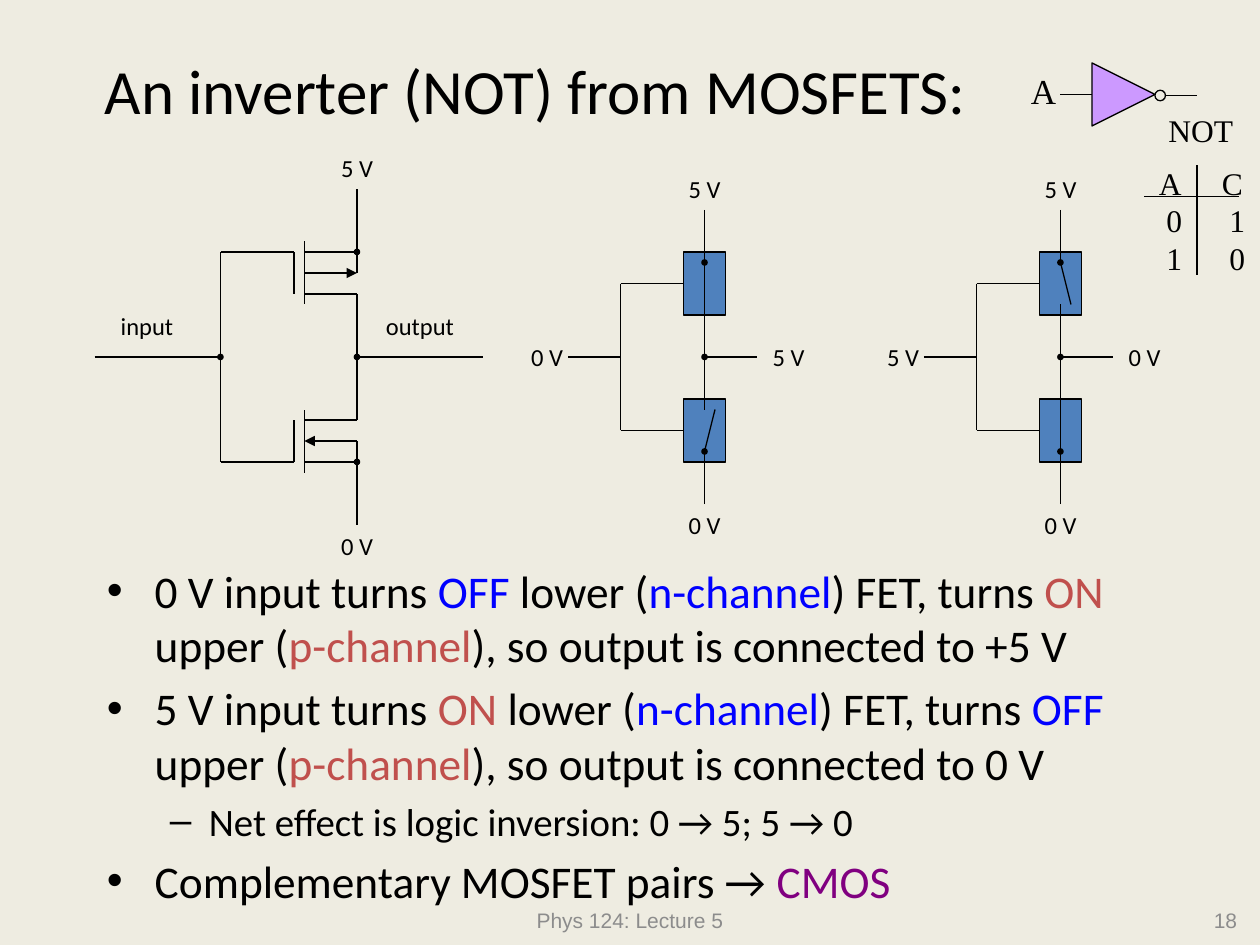
import pptx
import pptx.util
import pptx.dml.color
import pptx.enum.shapes
import pptx.enum.text
import pptx.oxml.ns
from lxml import etree

COLORS = {"paper": "EEECE1", "ink": "000000", "grey": "8C8C8C", "blue": "0000FF",
          "red": "C0504D", "purple": "800080", "switch": "4F81BD", "gate": "CC99FF"}
WORD_COLORS = {"OFF": "blue", "n-channel": "blue", "ON": "red",
               "p-channel": "red", "CMOS": "purple"}
COLS, ROWS = 120, 90          # grid of twelfths of an inch
AXIS = 34                     # row of the output line, the circuits mirror about it
SHAPE = pptx.enum.shapes.MSO_SHAPE
ALIGN = {"l": pptx.enum.text.PP_ALIGN.LEFT, "c": pptx.enum.text.PP_ALIGN.CENTER,
         "r": pptx.enum.text.PP_ALIGN.RIGHT}


def rgb(name):
    return pptx.dml.color.RGBColor.from_string(COLORS[name])


def add_xml(parent, tag, **attrs):
    return etree.SubElement(parent, pptx.oxml.ns.qn(tag), attrs)


def mirror(row, flipped):
    return 2 * AXIS - row if flipped else row


class Deck:
    def __init__(self):
        self.prs = pptx.Presentation()
        self.prs.slide_width = pptx.util.Inches(10)
        self.prs.slide_height = pptx.util.Inches(7.5)
        self.s = self.prs.slides.add_slide(self.prs.slide_layouts[6])
        self.s.background.fill.solid()
        self.s.background.fill.fore_color.rgb = rgb("paper")

    def x(self, col):
        return round(self.prs.slide_width * col / COLS)

    def y(self, row):
        return round(self.prs.slide_height * row / ROWS)

    def line(self, x1, y1, x2, y2, arrow=False):
        c = self.s.shapes.add_connector(pptx.enum.shapes.MSO_CONNECTOR.STRAIGHT,
                                        self.x(x1), self.y(y1), self.x(x2), self.y(y2))
        c.line.color.rgb = rgb("ink")
        c.line.width = pptx.util.Pt(0.75)
        if arrow:
            add_xml(c.line._get_or_add_ln(), "a:tailEnd", type="triangle")
        add_xml(c._element.spPr, "a:effectLst")

    def shape(self, kind, x, y, w, h, fill=None, rotation=0):
        sp = self.s.shapes.add_shape(kind, self.x(x), self.y(y), self.x(w), self.y(h))
        sp.shadow.inherit = False
        sp.rotation = rotation
        if fill:
            sp.fill.solid()
            sp.fill.fore_color.rgb = rgb(fill)
        else:
            sp.fill.background()
        sp.line.color.rgb = rgb("ink")
        sp.line.width = pptx.util.Pt(0.75)

    def dot(self, x, y):
        self.shape(SHAPE.OVAL, x - 0.25, y - 0.25, 0.5, 0.5, "ink")

    def style(self, r, size, font="Calibri", color="ink"):
        r.font.size = pptx.util.Pt(size)
        r.font.name = font
        r.font.color.rgb = rgb(color)

    def text(self, text, x, y, w, h, size, font="Calibri", color="ink", align="c",
             middle=False, wrap=False):
        tf = self.s.shapes.add_textbox(self.x(x), self.y(y), self.x(w), self.y(h)).text_frame
        tf.word_wrap = wrap
        if middle:
            tf.vertical_anchor = pptx.enum.text.MSO_ANCHOR.MIDDLE
        tf.text = text
        for p in tf.paragraphs:
            p.alignment = ALIGN[align]
            for r in p.runs:
                self.style(r, size, font, color)
        return tf

    def label(self, text, center, top):
        self.text(text, center - 5, top, 10, 4, 14)

    def bullets(self, items, x, y, w, h):
        tf = self.text("", x, y, w, h, 26, wrap=True)
        for i, (level, text) in enumerate(items):
            p = tf.paragraphs[0] if i == 0 else tf.add_paragraph()
            size, left, hang, mark = ((25.9, 0.38, 0.38, "•"), (22.2, 0.81, 0.31, "–"))[level]
            p.level = level
            p.alignment = ALIGN["l"]
            p.space_before = pptx.util.Pt(size / 5)
            for part in text.split("*"):
                r = p.add_run()
                r.text = part
                self.style(r, size, color=WORD_COLORS.get(part, "ink"))
            pPr = p._p.get_or_add_pPr()
            pPr.set("marL", str(pptx.util.Inches(left)))
            pPr.set("indent", str(-pptx.util.Inches(hang)))
            add_xml(pPr, "a:buFont", typeface="Arial")
            add_xml(pPr, "a:buChar", char=mark)

    def transistor(self, lower):
        bus, gate, channel, stem = 21, 28, 29, 34
        far, mid, near, supply, top, bottom = (
            mirror(row, lower) for row in (24, 26, 28, 18, 23, 29))
        self.line(bus, far, gate, far)
        self.line(gate, far, gate, near)
        self.line(channel, top, channel, bottom)
        self.line(channel, far, stem, far)
        self.line(channel, near, stem, near)
        self.line(stem, supply, stem, mid)
        self.line(stem, near, stem, AXIS)
        ends = (stem, channel) if lower else (channel, stem)
        self.line(ends[0], mid, ends[1], mid, arrow=True)
        self.dot(stem, far)

    def switch(self, stem, lower, closed):
        supply, pivot, contact, control = (mirror(row, lower) for row in (20, 25, 29, 27))
        self.shape(SHAPE.RECTANGLE, stem - 2, 38 if lower else 24, 4, 6, "switch")
        self.line(stem, supply, stem, pivot)
        self.line(stem, contact, stem, AXIS)
        self.line(stem - 8, control, stem - 2, control)
        self.line(stem, pivot, stem if closed else stem + 1, contact)
        self.dot(stem, pivot)

    def switch_pair(self, stem, source, result):
        for lower in (False, True):
            self.switch(stem, lower, closed=lower == (source == "5 V"))
        self.line(stem - 8, 27, stem - 8, 41)
        self.line(stem - 13, AXIS, stem - 8, AXIS)
        self.line(stem, AXIS, stem + 5, AXIS)
        self.dot(stem, AXIS)
        for text, center, top in (("5 V", stem, 16), (source, stem - 15, 32),
                                  (result, stem + 8, 32), ("0 V", stem, 48)):
            self.label(text, center, top)

    def truth_table(self, rows, x, y, w, h):
        tf = self.text("\n".join("\t".join(row) for row in rows), x, y, w, h, 18,
                       "Times New Roman", align="l")
        for i, p in enumerate(tf.paragraphs):
            left, stop = (0.06, 0.4) if i else (0, 0.35)
            pPr = p._p.get_or_add_pPr()
            pPr.set("marL", str(pptx.util.Inches(left)))
            pPr.set("indent", "0")
            tabs = add_xml(pPr, "a:tabLst")
            add_xml(tabs, "a:tab", pos=str(pptx.util.Inches(stop)), algn="l")


def main():
    d = Deck()

    # Title and footer
    d.text("An inverter (NOT) from MOSFETS:", 0, 1, 102, 15, 36, middle=True)
    d.text("Phys 124: Lecture 5", 41, 85.2, 38, 4.8, 12, "Arial", "grey", middle=True)
    d.text("18", 91, 85.2, 28, 4.8, 12, "Arial", "grey", "r", middle=True, wrap=True)

    # MOSFET circuit
    for lower in (False, True):
        d.transistor(lower)
    d.line(21, 24, 21, 44)
    for start, end, joint in ((9, 21, 21), (34, 46, 34)):
        d.line(start, AXIS, end, AXIS)
        d.dot(joint, AXIS)
    for text, center, top in (("5 V", 34, 14), ("0 V", 34, 50),
                              ("input", 14, 29), ("output", 40, 29)):
        d.label(text, center, top)

    # Equivalent switches for each input
    d.switch_pair(67.1, "0 V", "5 V")
    d.switch_pair(101, "5 V", "0 V")

    # Explanation
    rule = "{} V input turns *{}* lower (*n-channel*) FET, turns *{}* upper (*p-channel*), " \
           "so output is connected to {} V"
    d.bullets([(0, rule.format(0, "OFF", "ON", "+5")),
               (0, rule.format(5, "ON", "OFF", "0")),
               (1, "Net effect is logic inversion: 0 → 5; 5 → 0"),
               (0, "Complementary MOSFET pairs → *CMOS")], 9, 53, 102, 32)

    # NOT gate symbol
    d.shape(SHAPE.ISOSCELES_TRIANGLE, 104, 6, 6, 6, "gate", rotation=90)
    d.line(101, 9, 104, 9)
    d.line(111, 9.1, 114, 9.1)
    d.shape(SHAPE.OVAL, 110, 8.6, 1, 1)
    d.text("A", 97, 6, 4.8, 5.2, 20, "Times New Roman", align="l")
    d.text("NOT", 109, 10, 10.7, 6, 18, "Times New Roman")

    # Truth table
    d.truth_table([("A", "C"), ("0", "1"), ("1", "0")], 109.2, 15, 10.8, 12)
    d.line(109, 18.75, 118, 18.75)
    d.line(114, 15.75, 114, 26.2)

    d.prs.save("out.pptx")


if __name__ == "__main__":
    main()
